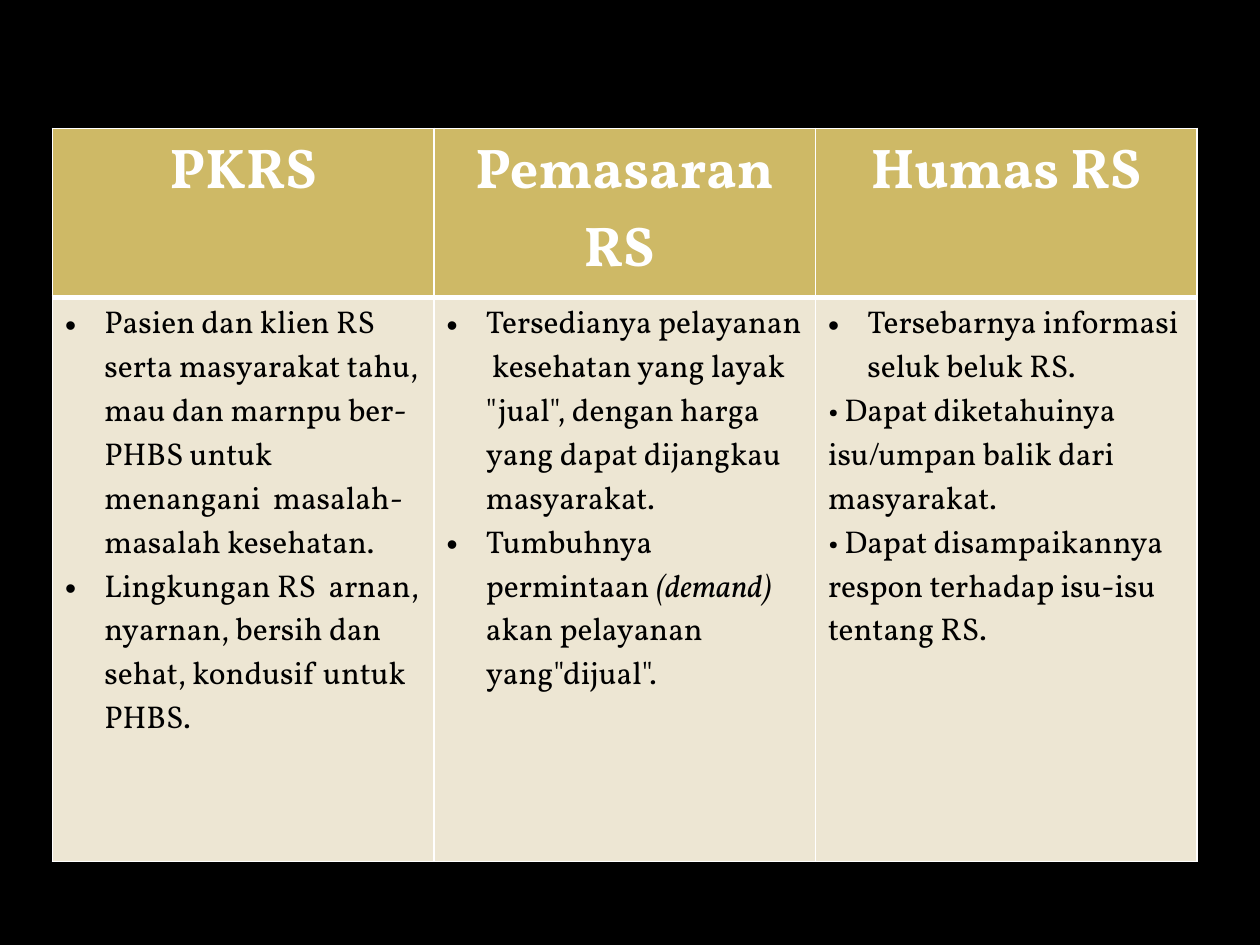
import dataclasses

import pptx
import pptx.dml.color
import pptx.enum.text
import pptx.oxml
import pptx.oxml.ns
import pptx.util

Pt = pptx.util.Pt
ALIGN = pptx.enum.text.PP_ALIGN


@dataclasses.dataclass(frozen=True)
class Theme:
    font: str = "Vollkorn"
    background: str = "000000"
    header_fill: str = "CEB966"
    header_text: str = "FFFFFF"
    body_fill: str = "EDE6D3"
    body_text: str = "000000"
    border: str = "FFFFFF"
    header_size: int = 32
    body_size: int = 18
    thin: int = 1
    thick: int = 3
    indent: float = 22.5


def rgb(value):
    return pptx.dml.color.RGBColor.from_string(value)


def add_text(p, text, *, font, size, color, bold=False, italic=False):
    """Add one formatted run to a paragraph."""
    r = p.add_run()
    r.text = text
    r.font.name = font
    r.font.size = Pt(size)
    r.font.color.rgb = rgb(color)
    r.font.bold = bold
    r.font.italic = italic
    return r


class SlideBuilder:
    def __init__(self, slide, theme):
        self.s = slide
        self.theme = theme

    def background(self):
        fill = self.s.background.fill
        fill.solid()
        fill.fore_color.rgb = rgb(self.theme.background)

    def borders(self, cell, **widths):
        tc_pr = cell._tc.get_or_add_tcPr()
        for side in "LRTB":
            width = Pt(widths.get(side, self.theme.thin))
            tc_pr.append(pptx.oxml.parse_xml(
                f'<a:ln{side} {pptx.oxml.ns.nsdecls("a")} w="{width}">'
                f'<a:solidFill><a:srgbClr val="{self.theme.border}"/></a:solidFill>'
                f'</a:ln{side}>'))

    def bullet(self, p):
        p_pr = p._p.get_or_add_pPr()
        indent = Pt(self.theme.indent)
        p_pr.set("marL", str(indent))
        p_pr.set("indent", str(-indent))
        ns = pptx.oxml.ns.nsdecls("a")
        p_pr.append(pptx.oxml.parse_xml(f'<a:buFont {ns} typeface="Arial"/>'))
        p_pr.append(pptx.oxml.parse_xml(f'<a:buChar {ns} char="•"/>'))

    def fill(self, cell, color):
        cell.fill.solid()
        cell.fill.fore_color.rgb = rgb(color)

    def header_cell(self, cell, text):
        t = self.theme
        self.borders(cell, B=t.thick)
        self.fill(cell, t.header_fill)
        p = cell.text_frame.paragraphs[0]
        p.alignment = ALIGN.CENTER
        add_text(p, text, font=t.font, size=t.header_size,
                 color=t.header_text, bold=True)

    def body_cell(self, cell, paragraphs):
        t = self.theme
        self.borders(cell, T=t.thick)
        self.fill(cell, t.body_fill)
        tf = cell.text_frame
        for i, (bulleted, runs) in enumerate(paragraphs):
            p = tf.add_paragraph() if i else tf.paragraphs[0]
            if bulleted:
                self.bullet(p)
            for text, italic in runs:
                add_text(p, text, font=t.font, size=t.body_size,
                         color=t.body_text, italic=italic)

    def table(self, columns, left, top, col_width, row_heights):
        frame = self.s.shapes.add_table(
            len(row_heights), len(columns), Pt(left), Pt(top),
            Pt(col_width * len(columns)), Pt(sum(row_heights)))
        table = frame.table
        for row, height in zip(table.rows, row_heights):
            row.height = Pt(height)
        for i, (heading, paragraphs) in enumerate(columns):
            table.columns[i].width = Pt(col_width)
            self.header_cell(table.cell(0, i), heading)
            self.body_cell(table.cell(1, i), paragraphs)


def item(*runs, bulleted=True):
    """Describe a paragraph; runs are strings or (string, italic) pairs."""
    return bulleted, [(r, False) if isinstance(r, str) else r for r in runs]


COLUMNS = [
    ("PKRS", [
        item("Pasien dan klien RS serta masyarakat tahu, mau dan marnpu ber- "
             "PHBS untuk menangani  masalah-masalah kesehatan."),
        item("Lingkungan RS  arnan, nyarnan, bersih dan sehat, "
             "kondusif untuk PHBS."),
    ]),
    ("Pemasaran RS ", [
        item('Tersedianya pelayanan  kesehatan yang layak "jual", '
             "dengan harga yang dapat dijangkau masyarakat."),
        item("Tumbuhnya permintaan ", ("(demand) ", True),
             'akan pelayanan yang"dijual".'),
    ]),
    ("Humas RS", [
        item("Tersebarnya informasi seluk beluk RS."),
        item("• Dapat diketahuinya isu/umpan balik dari masyarakat.",
             bulleted=False),
        item("• Dapat disampaikannya", bulleted=False),
        item("respon terhadap isu-isu tentang RS.", bulleted=False),
    ]),
]


def main():
    prs = pptx.Presentation()
    prs.slide_width, prs.slide_height = Pt(720), Pt(540)

    # Blank layout, since the slide has no title
    slide = SlideBuilder(prs.slides.add_slide(prs.slide_layouts[6]), Theme())
    slide.background()

    # Comparison table
    slide.table(COLUMNS, left=30, top=73.4, col_width=218,
                row_heights=[67, 322.5])
    prs.save("out.pptx")


if __name__ == "__main__":
    main()
